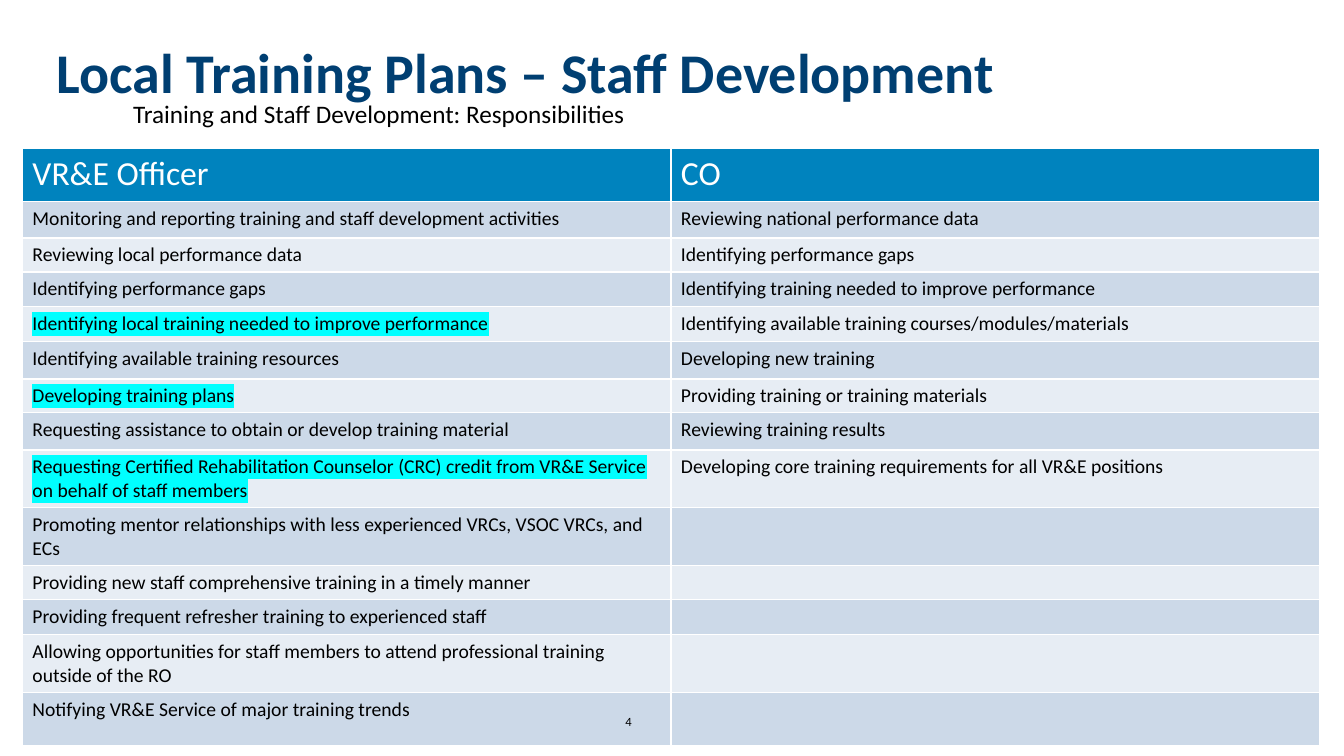
from lxml import etree
from pptx import Presentation
from pptx.dml.color import RGBColor
from pptx.enum.text import MSO_ANCHOR as Anchor, MSO_AUTO_SIZE as Fit, PP_ALIGN as Align
from pptx.oxml.ns import qn
from pptx.util import Pt

FACE = "Calibri"
BLUE, NAVY, BLACK, WHITE = "0083BE", "003F72", "000000", "FFFFFF"
BANDS = ["CCD9E8", "E7EDF4"]
MARK = "00FFFF"

# Height, officer duty, central office duty, whether the officer duty is marked
ROWS = [
    (38, "VR&E Officer", "CO", False),
    (26, "Monitoring and reporting training and staff development activities",
     "Reviewing national performance data", False),
    (24, "Reviewing local performance data", "Identifying performance gaps", False),
    (25, "Identifying performance gaps",
     "Identifying training needed to improve performance", False),
    (25, "Identifying local training needed to improve performance",
     "Identifying available training courses/modules/materials", True),
    (26.5, "Identifying available training resources", "Developing new training", False),
    (24, "Developing training plans", "Providing training or training materials", True),
    (26.5, "Requesting assistance to obtain or develop training material",
     "Reviewing training results", False),
    (41, "Requesting Certified Rehabilitation Counselor (CRC) credit from "
     "VR&E Service on behalf of staff members",
     "Developing core training requirements for all VR&E positions", True),
    (41, "Promoting mentor relationships with less experienced VRCs, VSOC VRCs, and ECs",
     "", False),
    (24, "Providing new staff comprehensive training in a timely manner", "", False),
    (25, "Providing frequent refresher training to experienced staff", "", False),
    (41, "Allowing opportunities for staff members to attend professional "
     "training outside of the RO", "", False),
    (38, "Notifying VR&E Service of major training trends", "", False),
]


def color(code):
    return RGBColor.from_string(code)


def style(para, size, code, bold=False):
    font = para.font
    font.name, font.size, font.bold = FACE, Pt(size), bold
    font.color.rgb = color(code)


def mark(run):
    light = etree.SubElement(run._r.get_or_add_rPr(), qn("a:highlight"))
    etree.SubElement(light, qn("a:srgbClr"), val=MARK)


def add_title(slide, x, y, w, h):
    title = slide.shapes.title
    title.left, title.top, title.width, title.height = Pt(x), Pt(y), Pt(w), Pt(h)
    frame = title.text_frame
    frame.text = "Local Training Plans – Staff Development"
    frame.auto_size, frame.vertical_anchor = Fit.NONE, Anchor.MIDDLE
    para = frame.paragraphs[0]
    para.alignment, para.line_spacing = Align.LEFT, 0.9
    style(para, 40, NAVY, True)


def add_label(slide, x, y, w, h, text, size, align=Align.LEFT, anchor=Anchor.TOP):
    frame = slide.shapes.add_textbox(Pt(x), Pt(y), Pt(w), Pt(h)).text_frame
    frame.word_wrap, frame.vertical_anchor = True, anchor
    frame.text = text
    para = frame.paragraphs[0]
    para.alignment = align
    style(para, size, BLACK)


def add_duties(slide, x, y, w):
    tall = sum(row[0] for row in ROWS)
    grid = slide.shapes.add_table(len(ROWS), 2, Pt(x), Pt(y), Pt(w), Pt(tall)).table
    for col in grid.columns:
        col.width = Pt(w / 2)
    for i, (high, left, right, marked) in enumerate(ROWS):
        grid.rows[i].height = Pt(high)
        for j, text in enumerate((left, right)):
            cell = grid.cell(i, j)
            cell.fill.solid()
            cell.fill.fore_color.rgb = color(BANDS[(i - 1) % 2] if i else BLUE)
            para = cell.text_frame.paragraphs[0]
            style(para, 14 if i else 24, BLACK if i else WHITE)
            if text:
                run = para.add_run()
                run.text = text
                if marked and j == 0:
                    mark(run)
            else:
                # Keep the empty line as small as the filled ones
                etree.SubElement(para._p, qn("a:endParaRPr"), sz="1400")


def main():
    deck = Presentation()
    deck.slide_width, deck.slide_height = Pt(960), Pt(540)
    slide = deck.slides.add_slide(deck.slide_layouts[5])

    # Heading, duties table, subtitle and page number
    add_title(slide, 33.5, 23, 765, 61)
    add_duties(slide, 16, 106, 926.5)
    add_label(slide, 88, 67, 784, 29, "Training and Staff Development: Responsibilities", 18)
    add_label(slide, 422, 500.5, 54, 29, "4", 9, Align.CENTER, Anchor.MIDDLE)

    deck.save("out.pptx")


if __name__ == "__main__":
    main()
